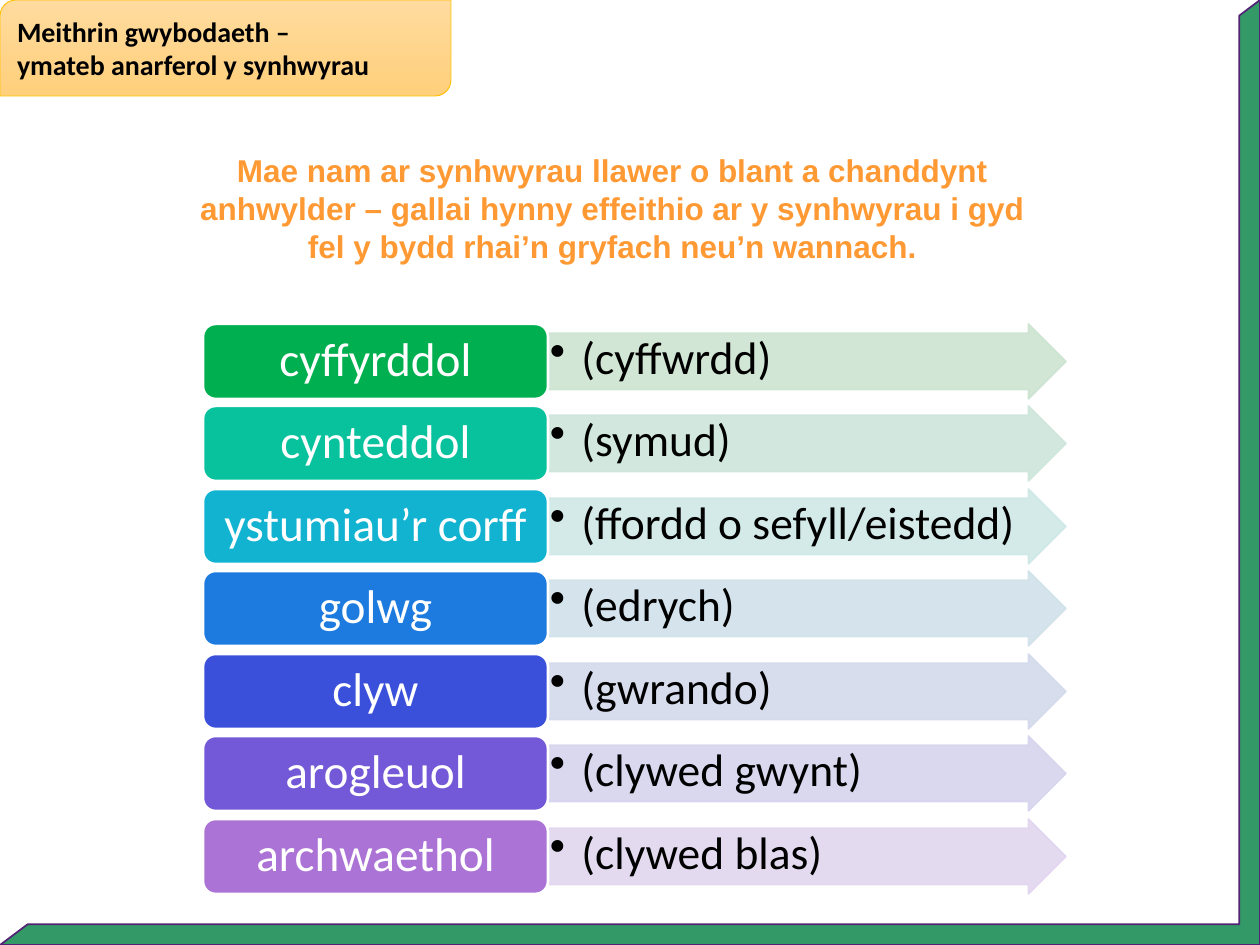
"""Build the slide on unusual sensory responses."""
from lxml import etree
from pptx import Presentation, util as u
from pptx.dml.color import RGBColor
from pptx.enum import shapes, text
from pptx.oxml.ns import qn

KIND = shapes.MSO_SHAPE
ALIGN = text.PP_ALIGN
MID = text.MSO_ANCHOR.MIDDLE


def px(n):
    return u.Emu(round(n * 914400 / 126))


def rgb(code):
    return RGBColor.from_string(code)


deck = Presentation()
deck.slide_width, deck.slide_height = px(1260), px(945)
slide = deck.slides.add_slide(deck.slide_layouts[6])
items = slide.shapes

frame = items.add_shape(KIND.HALF_FRAME, 0, 0, px(1260), px(945))
frame.rotation = 180
frame.adjustments[0] = frame.adjustments[1] = 0.022
frame.shadow.inherit = False
frame.fill.solid()
frame.fill.fore_color.rgb = rgb("339966")
frame.line.color.rgb = rgb("532476")
frame.line.width = u.Pt(1)

rows = [
    ("cyffyrddol", "(cyffwrdd)", "00B050", "CCE4D0"),
    ("cynteddol", "(symud)", "08C29E", "CEE6DB"),
    ("ystumiau’r corff", "(ffordd o sefyll/eistedd)", "11B3D1", "CFE8E6"),
    ("golwg", "(edrych)", "1D7BDF", "D1E2EA"),
    ("clyw", "(gwrando)", "3A50DB", "D3DAEC"),
    ("arogleuol", "(clywed gwynt)", "7358D7", "D7D4EE"),
    ("archwaethol", "(clywed blas)", "AB73D5", "E2D6EF"),
]
for i, (sense, act, dark, pale) in enumerate(rows):
    top = px(324 + 165 * i // 2)
    arrow = items.add_shape(KIND.RIGHT_ARROW, px(548), top, px(518), px(75))
    arrow.adjustments[0] = 0.75
    box = items.add_shape(KIND.ROUNDED_RECTANGLE, px(203), top, px(345), px(75))
    parts = [
        (arrow, act, pale, pale, 1, 26, "000000", ALIGN.LEFT, text.MSO_ANCHOR.TOP, 2, 2),
        (box, sense, dark, "FFFFFF", 1.5, 27, "FFFFFF", ALIGN.CENTER, MID, 14, 7),
    ]
    for shape, words, fill, edge, width, size, ink, align, anchor, side, rim in parts:
        shape.shadow.inherit = False
        shape.fill.solid()
        shape.fill.fore_color.rgb = rgb(fill)
        shape.line.color.rgb = rgb(edge)
        shape.line.width = u.Pt(width)
        body = shape.text_frame
        body.word_wrap = True
        body.vertical_anchor = anchor
        body.margin_left = body.margin_right = px(side)
        body.margin_top = body.margin_bottom = px(rim)
        para = body.paragraphs[0]
        para.text = words
        para.alignment = align
        para.line_spacing = 0.9
        if shape is arrow:
            props = para._p.get_or_add_pPr()
            props.set("marL", str(u.Inches(0.25)))
            props.set("indent", str(-u.Inches(0.25)))
            etree.SubElement(props, qn("a:buChar"), char="•")
        para.font.name = "Calibri"
        para.font.size = u.Pt(size)
        para.font.color.rgb = rgb(ink)
    for tint in arrow._element.spPr.iter(qn("a:srgbClr")):
        etree.SubElement(tint, qn("a:alpha"), val="90000")

intro = items.add_textbox(px(179), px(145), px(867), px(127))
intro.text_frame.word_wrap = False
intro.text_frame.text = (
    "Mae nam ar synhwyrau llawer o blant a chanddynt\n"
    "anhwylder – gallai hynny effeithio ar y synhwyrau i gyd\n"
    "fel y bydd rhai’n gryfach neu’n wannach."
)

title = items.add_shape(KIND.ROUND_2_DIAG_RECTANGLE, 0, 0, px(451), px(96))
title.shadow.inherit = False
title.fill.gradient()
title.fill.gradient_angle = 270
for stop, code in zip(title.fill.gradient_stops, ("FFDB9E", "FFD07C")):
    stop.color.rgb = rgb(code)
for stop, place in zip(title.fill.gradient_stops, (0, 1)):
    stop.position = place
title.line.color.rgb = rgb("FFC000")
title.line.width = u.Pt(0.5)
title.text_frame.word_wrap = True
title.text_frame.vertical_anchor = MID
title.text_frame.text = "Meithrin gwybodaeth –\nymateb anarferol y synhwyrau"

for shape, face, size, ink, align in (
    (intro, "Arial", 18, "FF9933", ALIGN.CENTER),
    (title, "Calibri", 16, "000000", ALIGN.LEFT),
):
    for para in shape.text_frame.paragraphs:
        para.alignment = align
        para.font.name = face
        para.font.size = u.Pt(size)
        para.font.bold = True
        para.font.color.rgb = rgb(ink)

deck.save("out.pptx")
